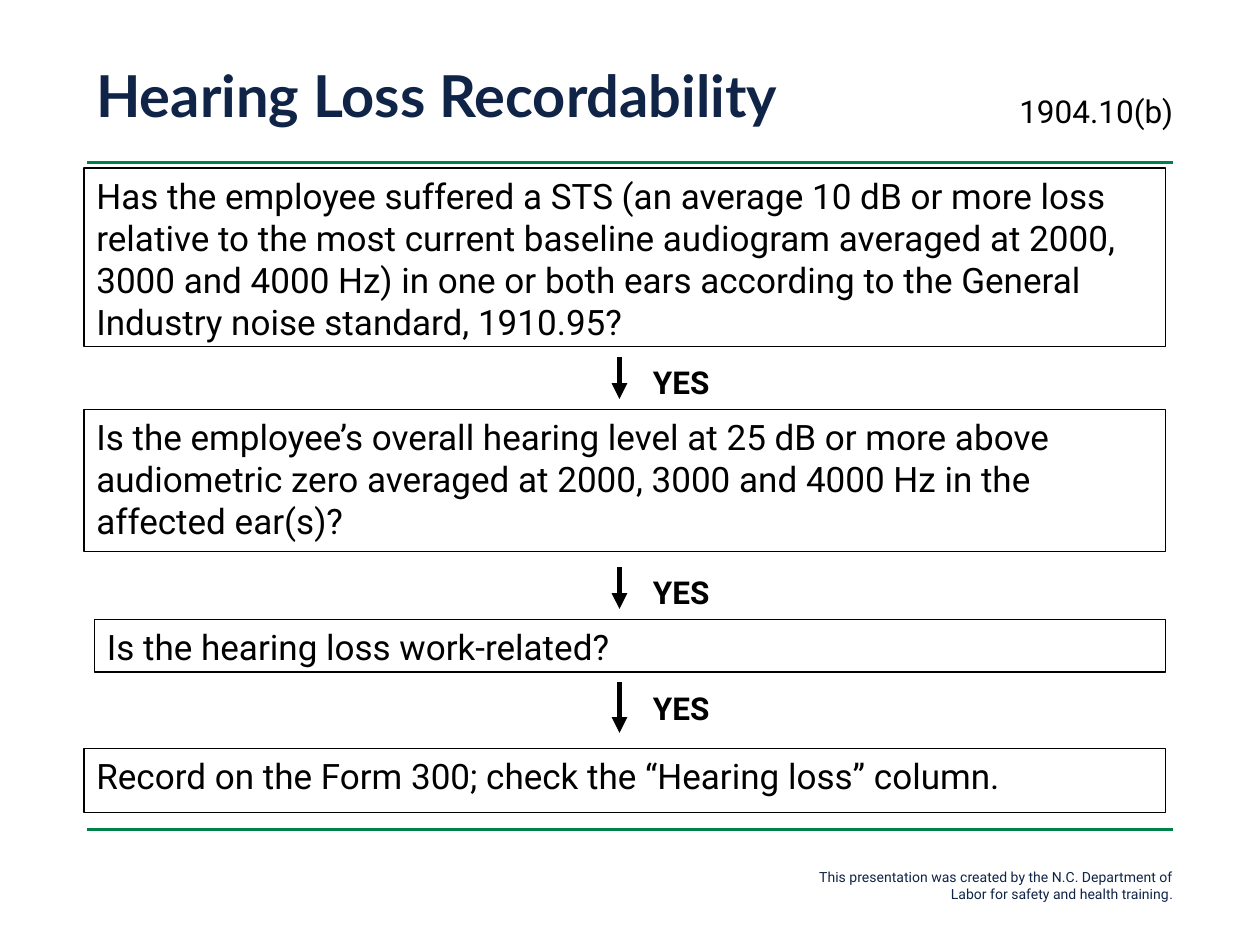
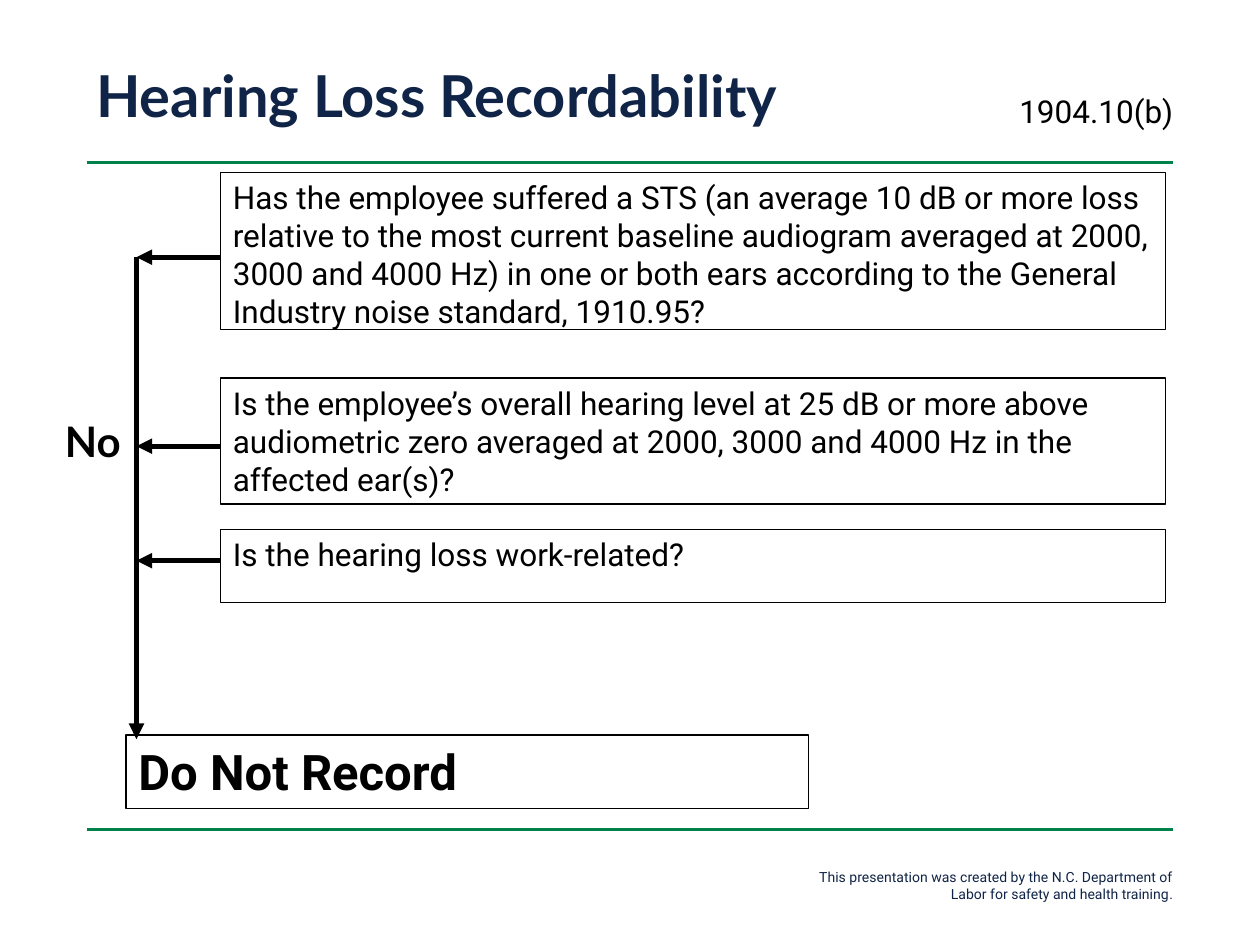
from lxml import etree
from pptx import Presentation
from pptx.dml.color import RGBColor
from pptx.enum import shapes, text
from pptx.oxml.ns import qn
from pptx.util import Inches, Pt

NAVY = RGBColor(0x10, 0x24, 0x47)
PURPLE = RGBColor(0x2B, 0x0E, 0x62)
GREEN = RGBColor(0x00, 0x81, 0x4A)
BLACK = RGBColor(0, 0, 0)
WHITE = RGBColor(255, 255, 255)
HEAD, BODY = "Lato", "Roboto"

deck = Presentation()
deck.slide_width, deck.slide_height = Inches(10), Inches(7.5)
CELL = deck.slide_width / 120  # the grid has 120 columns and 90 rows


def write(slide, place, runs, size, font=BODY, bold=False, box=False, wrap=True):
    """Put (words, colour) runs at a grid place, in a framed box if asked."""
    left, top, wide, high = [round(n * CELL) for n in place]
    if box:
        shape = slide.shapes.add_shape(
            shapes.MSO_SHAPE.RECTANGLE, left, top, wide, high)
        shape.shadow.inherit = False
        shape.fill.solid()
        shape.fill.fore_color.rgb = WHITE
        shape.line.color.rgb = BLACK
        shape.line.width = Pt(0.75)
    else:
        shape = slide.shapes.add_textbox(left, top, wide, high)
    frame = shape.text_frame
    frame.word_wrap = wrap
    frame.vertical_anchor = text.MSO_ANCHOR.TOP
    para = frame.paragraphs[0]
    para.alignment = text.PP_ALIGN.LEFT
    for words, colour in runs:
        run = para.add_run()
        run.text = words
        run.font.name, run.font.size, run.font.bold = font, Pt(size), bold
        run.font.color.rgb = colour
    return frame


def draw(slide, start, end, colour=BLACK, width=3, arrow=True):
    """Draw a straight line between two grid points."""
    ends = [round(n * CELL) for n in (*start, *end)]
    line = slide.shapes.add_connector(shapes.MSO_CONNECTOR.STRAIGHT, *ends)
    line.line.color.rgb = colour
    line.line.width = Pt(width)
    if arrow:
        etree.SubElement(line.line._get_or_add_ln(), qn("a:tailEnd"), type="triangle")
    etree.SubElement(line._element.spPr, qn("a:effectLst"))


# What both slides share
pages = []
for _ in range(2):
    page = deck.slides.add_slide(deck.slide_layouts[6])
    for row in (15.5, 79):
        draw(page, (8.3, row), (111.7, row), GREEN, 2, arrow=False)
    foot = write(page, (73.9, 82.1, 39, 4.4), [
        ("This presentation was created by the N.C. Department of "
         "Labor for safety and health training", NAVY),
        (".", PURPLE)], 8)
    foot.paragraphs[0].alignment = text.PP_ALIGN.RIGHT
    title = write(page, (8, 5.8, 82, 7.2),
                  [("Hearing Loss Recordability", NAVY)], 33, HEAD, True)
    title.vertical_anchor = text.MSO_ANCHOR.MIDDLE
    title.paragraphs[0].line_spacing = 0.9
    write(page, (95.9, 8.2, 17.5, 4.8), [("1904.10(b)", BLACK)], 18, wrap=False)
    pages.append(page)
yes, no = pages

SHIFT = ("Has the employee suffered a STS (an average 10 dB or more loss "
         "relative to the most current baseline audiogram averaged at 2000, "
         "3000 and 4000 Hz) in one or both ears according to the General "
         "Industry noise standard, 1910.95?")
LEVEL = ("Is the employee’s overall hearing level at 25 dB or more above "
         "audiometric zero averaged at 2000, 3000 and 4000 Hz in the "
         "affected ear(s)?")
WORK = "Is the hearing loss work-related?"
RECORD = "Record on the Form 300; check the “Hearing loss” column."
EDGE = 111  # right side of every question box

# Slide 1: each yes leads down to the next box
for words, left, top, high in (
        (SHIFT, 8, 16, 17), (LEVEL, 8, 39, 13.5),
        (WORK, 9, 59, 5), (RECORD, 8, 71.3, 6.1)):
    write(yes, (left, top, EDGE - left, high), [(words, BLACK)], 20, box=True)
for top, end in ((34, 38), (54, 58), (65, 69.8)):
    draw(yes, (59, top), (59, end))
    write(yes, (61, top, 8, 4.8), [("YES", BLACK)], 18, bold=True, wrap=False)

# Slide 2: each no leads left to one stem, then down to the outcome
STEM, LEFT = 13, 21
for words, top, high, exit_row in (
        (SHIFT, 16.4, 15, 24.5), (LEVEL, 36, 12, 42.5), (WORK, 50.4, 7, 53.4)):
    draw(no, (LEFT, exit_row), (STEM, exit_row))
    write(no, (LEFT, top, EDGE - LEFT, high), [(words, BLACK)], 18, box=True)
write(no, (12, 70, 65, 7), [("Do Not Record", BLACK)], 28, bold=True, box=True)
draw(no, (STEM, 24.5), (STEM, 70.4))
write(no, (5, 39, 11, 6), [("No", BLACK)], 24, HEAD, True)

deck.save("out.pptx")
